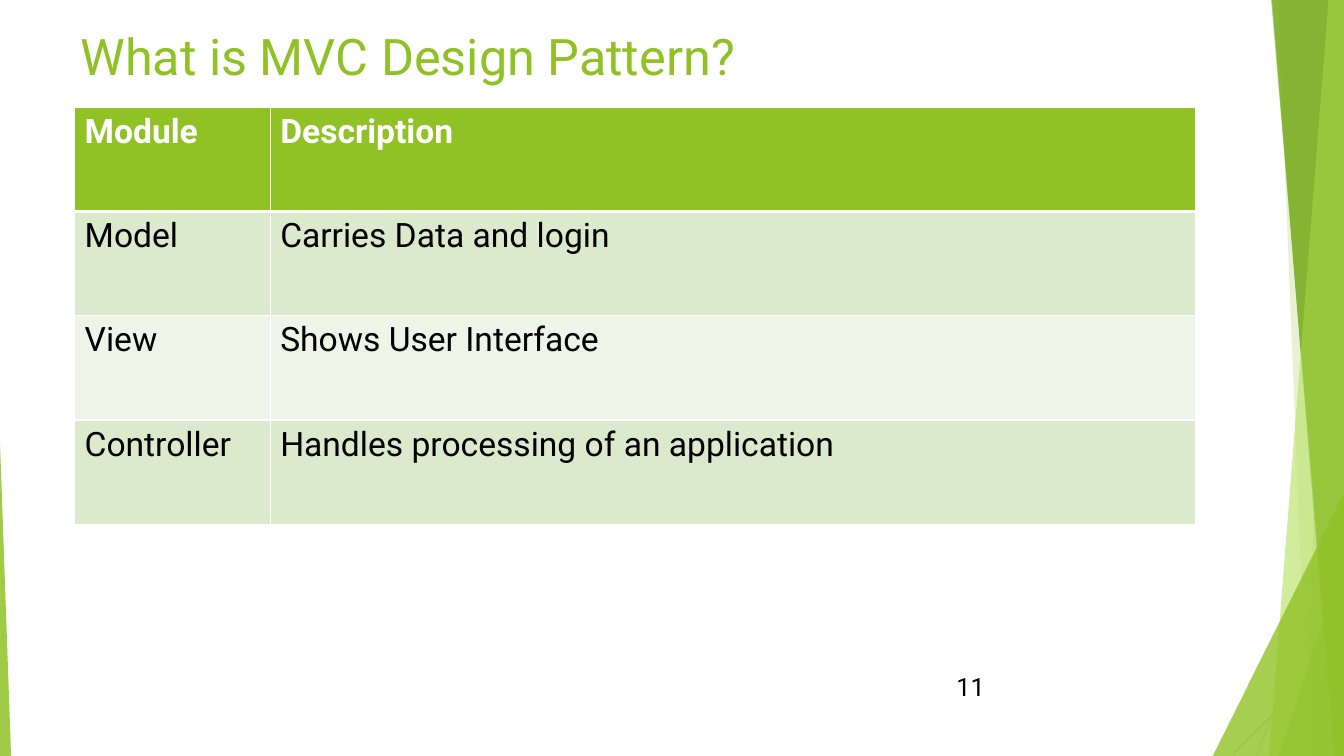
"""Build the MVC design pattern slide with its module table and green facets."""
from dataclasses import dataclass

from lxml import etree
from pptx import Presentation
from pptx.dml.color import RGBColor
from pptx.enum import shapes, text
from pptx.oxml import ns
from pptx.util import Pt


@dataclass(frozen=True)
class Theme:
    font: str = "Roboto"
    green: str = "90C226"
    leaf: str = "54A021"
    forest: str = "3F7819"
    lime: str = "C0E474"
    white: str = "FFFFFF"
    black: str = "000000"
    band_dark: str = "DBE9CD"
    band_light: str = "EEF4E8"
    rule_dark: str = "BFBFBF"
    rule_light: str = "D9D9D9"
    title_size: float = 36
    table_size: float = 24
    number_size: float = 18


@dataclass(frozen=True)
class Rule:
    x1: float
    y1: float
    x2: float
    y2: float
    color: str


@dataclass(frozen=True)
class Stripe:
    top_x: float
    bottom_x: float
    color: str
    alpha: int


@dataclass(frozen=True)
class Corner:
    left: float
    top: float
    width: float
    apex: float
    color: str
    alpha: int


@dataclass(frozen=True)
class Label:
    text: str
    left: float
    top: float
    width: float
    height: float
    size: float
    color: str
    anchor: text.MSO_ANCHOR


T = Theme()
WIDTH, HEIGHT = 960, 540

FACETS = [
    Rule(957.6, 463, 881.3, 537.8, T.rule_dark),
    Rule(946.1, 411.8, 897.4, HEIGHT, T.rule_light),
    Stripe(951, 932.4, T.green, 30),
    Stripe(913, 934.6, T.green, 20),
    Corner(913, 398.9, 47, 1, T.leaf, 72),
    Stripe(908.6, 952.6, T.forest, 70),
    Stripe(949, 906.5, T.lime, 70),
    Stripe(908, 954, T.green, 65),
    Corner(866.2, 352.1, 93.8, 1, T.green, 80),
    Corner(0, 316.8, 7.9, 0, T.green, 85),
]
LABELS = [
    Label("What is MVC Design Pattern?", 50.4, 13, 846.7, 52.6,
          T.title_size, T.green, text.MSO_ANCHOR.MIDDLE),
    Label("11", 676.1, 475.9, 54, 28.8,
          T.number_size, T.black, text.MSO_ANCHOR.TOP),
]
TABLE_LEFT, TABLE_TOP, ROW_HEIGHT = 53.3, 76.5, 74.5
COLUMN_WIDTHS = (139.7, 660.7)
ROWS = [
    ("Module", "Description"),
    ("Model", "Carries Data and login"),
    ("View", "Shows User Interface"),
    ("Controller", "Handles processing of an application"),
]


def rgb(color: str) -> RGBColor:
    """Turn a hex string into a colour."""
    return RGBColor.from_string(color)


def write(tf, words: str, size: float, color: str, bold: bool = False) -> None:
    """Put one formatted run in the first paragraph."""
    r = tf.paragraphs[0].add_run()
    r.text = words
    formats = {"name": T.font, "size": Pt(size), "bold": bold}
    for name, value in formats.items():
        setattr(r.font, name, value)
    r.font.color.rgb = rgb(color)


def paint(sp, color: str, alpha: int) -> None:
    """Give a shape a translucent fill without line or shadow."""
    sp.shadow.inherit = False
    sp.line.fill.background()
    sp.fill.solid()
    sp.fill.fore_color.rgb = rgb(color)
    clr = sp.element.find(".//" + ns.qn("a:srgbClr"))
    etree.SubElement(clr, ns.qn("a:alpha"), val=str(alpha * 1000))


def draw_rule(s, rule: Rule) -> None:
    """Draw a thin straight line."""
    ends = (Pt(v) for v in (rule.x1, rule.y1, rule.x2, rule.y2))
    sp = s.shapes.add_connector(shapes.MSO_CONNECTOR.STRAIGHT, *ends)
    sp.line.color.rgb = rgb(rule.color)
    sp.line.width = Pt(0.75)
    etree.SubElement(sp.element.spPr, ns.qn("a:effectLst"))


def draw_stripe(s, stripe: Stripe) -> None:
    """Draw a full-height facet against the right edge."""
    fb = s.shapes.build_freeform(Pt(stripe.top_x), 0)
    corners = [(WIDTH, 0), (WIDTH, HEIGHT), (stripe.bottom_x, HEIGHT)]
    fb.add_line_segments([(Pt(x), Pt(y)) for x, y in corners], close=True)
    paint(fb.convert_to_shape(), stripe.color, stripe.alpha)


def draw_corner(s, corner: Corner) -> None:
    """Draw a triangle standing on the bottom edge."""
    box = (corner.left, corner.top, corner.width, HEIGHT - corner.top)
    sp = s.shapes.add_shape(
        shapes.MSO_SHAPE.ISOSCELES_TRIANGLE, *(Pt(v) for v in box))
    sp.adjustments[0] = corner.apex
    paint(sp, corner.color, corner.alpha)


def draw_label(s, label: Label) -> None:
    """Draw a wrapped text box."""
    box = (label.left, label.top, label.width, label.height)
    tf = s.shapes.add_textbox(*(Pt(v) for v in box)).text_frame
    for name, value in {"word_wrap": True, "vertical_anchor": label.anchor}.items():
        setattr(tf, name, value)
    write(tf, label.text, label.size, label.color)


def add_borders(cell, widths: dict[str, float]) -> None:
    """Add white borders of the given widths to a cell."""
    pr = cell._tc.get_or_add_tcPr()
    for side, width in widths.items():
        ln = etree.SubElement(pr, ns.qn(f"a:ln{side}"), w=str(Pt(width)))
        fill = etree.SubElement(ln, ns.qn("a:solidFill"))
        etree.SubElement(fill, ns.qn("a:srgbClr"), val=T.white)


def draw_table(s) -> None:
    """Draw the banded module table."""
    box = (TABLE_LEFT, TABLE_TOP, sum(COLUMN_WIDTHS), ROW_HEIGHT * len(ROWS))
    table = s.shapes.add_table(
        len(ROWS), len(COLUMN_WIDTHS), *(Pt(v) for v in box)).table
    for column, width in zip(table.columns, COLUMN_WIDTHS):
        column.width = Pt(width)
    for i, words in enumerate(ROWS):
        table.rows[i].height = Pt(ROW_HEIGHT)
        head = i == 0
        fill = T.green if head else T.band_dark if i % 2 else T.band_light
        widths = {"L": 1, "R": 1, "T": 3 if i == 1 else 1, "B": 3 if head else 1}
        for j, word in enumerate(words):
            cell = table.cell(i, j)
            add_borders(cell, widths)
            cell.fill.solid()
            cell.fill.fore_color.rgb = rgb(fill)
            write(cell.text_frame, word, T.table_size,
                  T.white if head else T.black, head)


def main() -> None:
    """Build and save the slide."""
    prs = Presentation()
    prs.slide_width, prs.slide_height = Pt(WIDTH), Pt(HEIGHT)
    s = prs.slides.add_slide(prs.slide_layouts[6])
    draw = {Rule: draw_rule, Stripe: draw_stripe, Corner: draw_corner}
    for facet in FACETS:
        draw[type(facet)](s, facet)
    draw_table(s)
    for label in LABELS:
        draw_label(s, label)
    prs.save("out.pptx")


if __name__ == "__main__":
    main()
